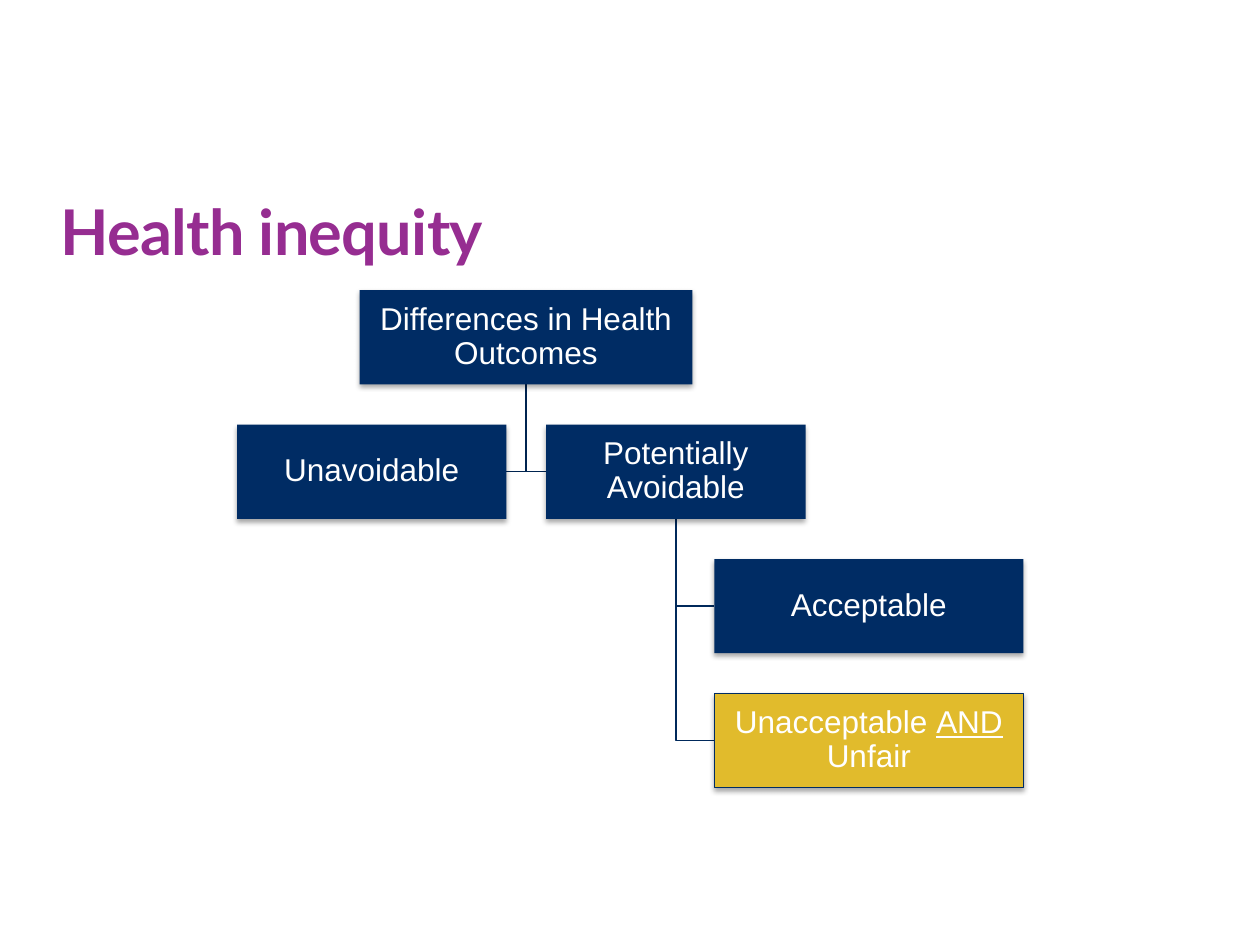
"""Build the health inequity slide: a title above a tree of outcome boxes."""
import dataclasses

import lxml.etree
import pptx
import pptx.dml.color
import pptx.enum.shapes
import pptx.enum.text
import pptx.oxml.ns
import pptx.util

Cm = pptx.util.Cm
Pt = pptx.util.Pt
RGB = pptx.dml.color.RGBColor
qn = pptx.oxml.ns.qn


@dataclasses.dataclass(frozen=True)
class Theme:
    """Colours, fonts and type sizes."""
    title: RGB = RGB(0x96, 0x2D, 0x91)
    navy: RGB = RGB(0x00, 0x2C, 0x64)
    gold: RGB = RGB(0xE1, 0xBB, 0x2C)
    white: RGB = RGB(0xFF, 0xFF, 0xFF)
    upper: RGB = RGB(0x00, 0x24, 0x50)
    lower: RGB = RGB(0x00, 0x29, 0x5B)
    head: str = "Lato"
    body: str = "Arial"
    large: Pt = Pt(36)
    small: Pt = Pt(18)
    rule: Pt = Pt(0.75)


@dataclasses.dataclass(frozen=True)
class Node:
    """A box of the tree, placed by its row."""
    text: str
    row: int
    left: float
    width: float
    stress: str = ""

    @property
    def top(self) -> float:
        """Return the top edge."""
        return TOP + self.row * STEP

    @property
    def axis(self) -> float:
        """Return the horizontal centre."""
        return self.left + self.width / 2


THEME = Theme()
TOP, STEP, HIGH = 5.85, 2.71, 1.9
ROOT = Node("Differences in Health Outcomes", 0, 7.25, 6.71)
FIXED = Node("Unavoidable", 1, 4.78, 5.43)
OPEN = Node("Potentially Avoidable", 1, 11.01, 5.23)
FAIR = Node("Acceptable", 2, 14.4, 6.23)
UNFAIR = Node("Unacceptable AND Unfair", 3, 14.4, 6.23, "AND")
NODES = (ROOT, FIXED, OPEN, FAIR, UNFAIR)
LINKS = (
    (OPEN, UNFAIR, THEME.lower),
    (OPEN, FAIR, THEME.lower),
    (ROOT, OPEN, THEME.upper),
    (ROOT, FIXED, THEME.upper),
)


def add_title(slide, text: str) -> None:
    """Place and format the title."""
    shape = slide.shapes.title
    shape.left, shape.top = Cm(1.22), Cm(3.66)
    shape.width, shape.height = Cm(17), Cm(1.75)
    frame = shape.text_frame
    frame.text = text
    frame.auto_size = pptx.enum.text.MSO_AUTO_SIZE.NONE
    frame.vertical_anchor = pptx.enum.text.MSO_ANCHOR.BOTTOM
    frame.margin_left = frame.margin_right = 0
    frame.margin_top = frame.margin_bottom = 0
    para = frame.paragraphs[0]
    para.alignment = pptx.enum.text.PP_ALIGN.LEFT
    run = para.runs[0]
    run.font.name, run.font.size = THEME.head, THEME.large
    run.font.bold = True
    run.font.color.rgb = THEME.title
    run._r.get_or_add_rPr().set("spc", "-40")


def add_link(slide, start: Node, end: Node, tint: RGB) -> None:
    """Draw an elbow from the foot of one box to the near side of another."""
    side = end.left if end.left > start.axis else end.left + end.width
    mid = Cm(end.top + HIGH / 2)
    pen = slide.shapes.build_freeform(Cm(start.axis), Cm(start.top + HIGH))
    pen.add_line_segments([(Cm(start.axis), mid), (Cm(side), mid)], close=False)
    shape = pen.convert_to_shape()
    shape.shadow.inherit = False
    shape.fill.background()
    shape.line.color.rgb = tint
    shape.line.width = THEME.rule


def add_shade(shape) -> None:
    """Give a shape a soft shadow straight below it."""
    shape.shadow.inherit = False
    effects = shape._element.spPr.find(qn("a:effectLst"))
    outer = lxml.etree.SubElement(
        effects, qn("a:outerShdw"), blurRad=str(Pt(3.1)), dist=str(Pt(1.8)),
        dir="5400000", rotWithShape="0")
    black = lxml.etree.SubElement(outer, qn("a:srgbClr"), val="000000")
    lxml.etree.SubElement(black, qn("a:alpha"), val="35000")


def add_node(slide, node: Node) -> None:
    """Draw a box with its label."""
    shape = slide.shapes.add_shape(
        pptx.enum.shapes.MSO_SHAPE.RECTANGLE,
        Cm(node.left), Cm(node.top), Cm(node.width), Cm(HIGH))
    shape.fill.solid()
    shape.fill.fore_color.rgb = THEME.gold if node.stress else THEME.navy
    if node.stress:
        shape.line.color.rgb = THEME.navy
        shape.line.width = THEME.rule
    else:
        shape.line.fill.background()
    add_shade(shape)
    frame = shape.text_frame
    frame.word_wrap = True
    frame.vertical_anchor = pptx.enum.text.MSO_ANCHOR.MIDDLE
    frame.margin_left = frame.margin_right = Cm(0.03)
    frame.margin_top = frame.margin_bottom = Cm(0.03)
    para = frame.paragraphs[0]
    para.alignment = pptx.enum.text.PP_ALIGN.CENTER
    para.line_spacing = 0.9
    parts = node.text.partition(node.stress) if node.stress else (node.text,)
    for part in parts:
        run = para.add_run()
        run.text = part
        run.font.name, run.font.size = THEME.body, THEME.small
        run.font.color.rgb = THEME.white
        if part == node.stress:
            run.font.underline = True


def main() -> None:
    """Build and save the deck."""
    deck = pptx.Presentation()
    deck.slide_width, deck.slide_height = Cm(25.4), Cm(19.05)
    slide = deck.slides.add_slide(deck.slide_layouts[5])
    add_title(slide, "Health inequity")
    for start, end, tint in LINKS:
        add_link(slide, start, end, tint)
    for node in NODES:
        add_node(slide, node)
    deck.save("out.pptx")


if __name__ == "__main__":
    main()
